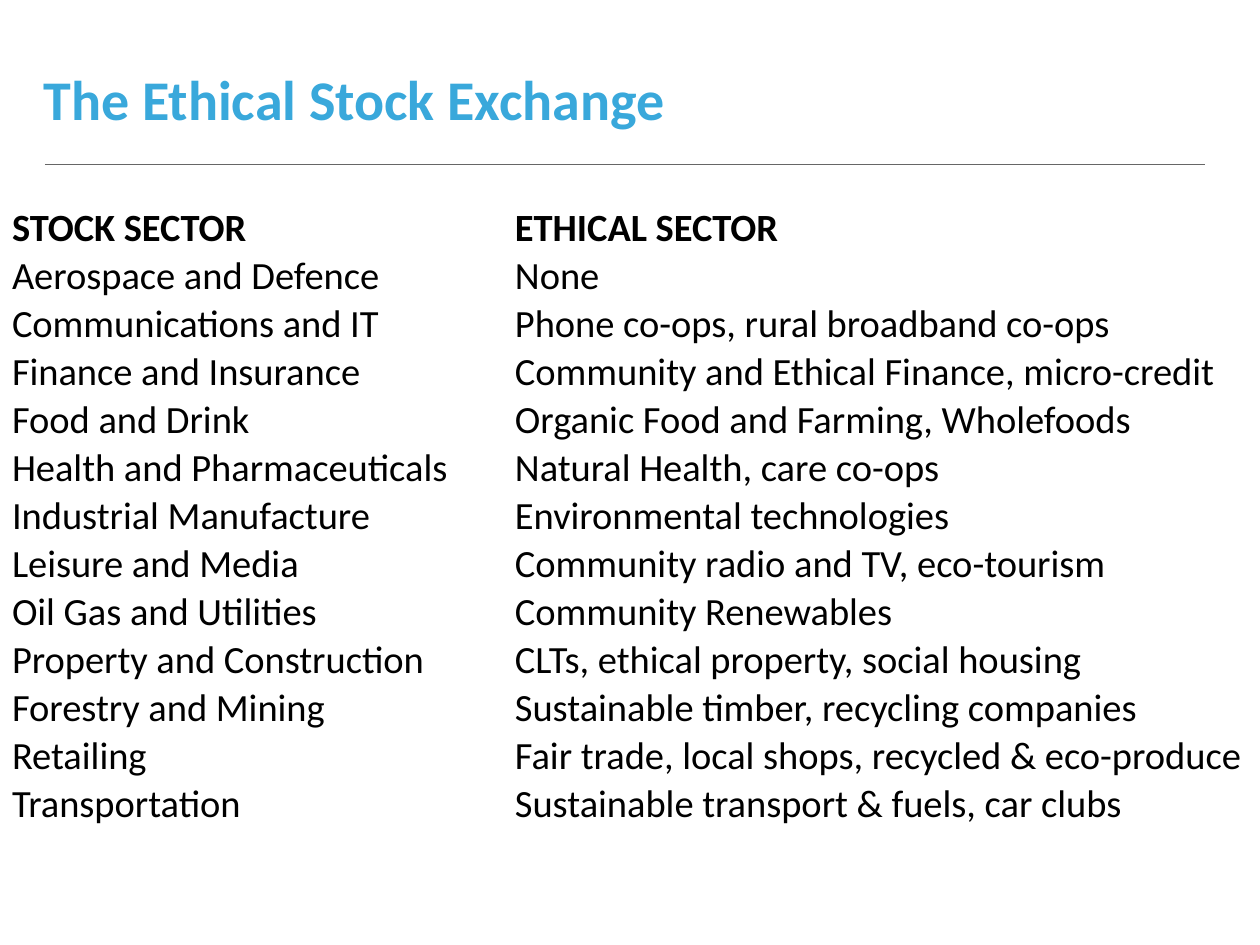
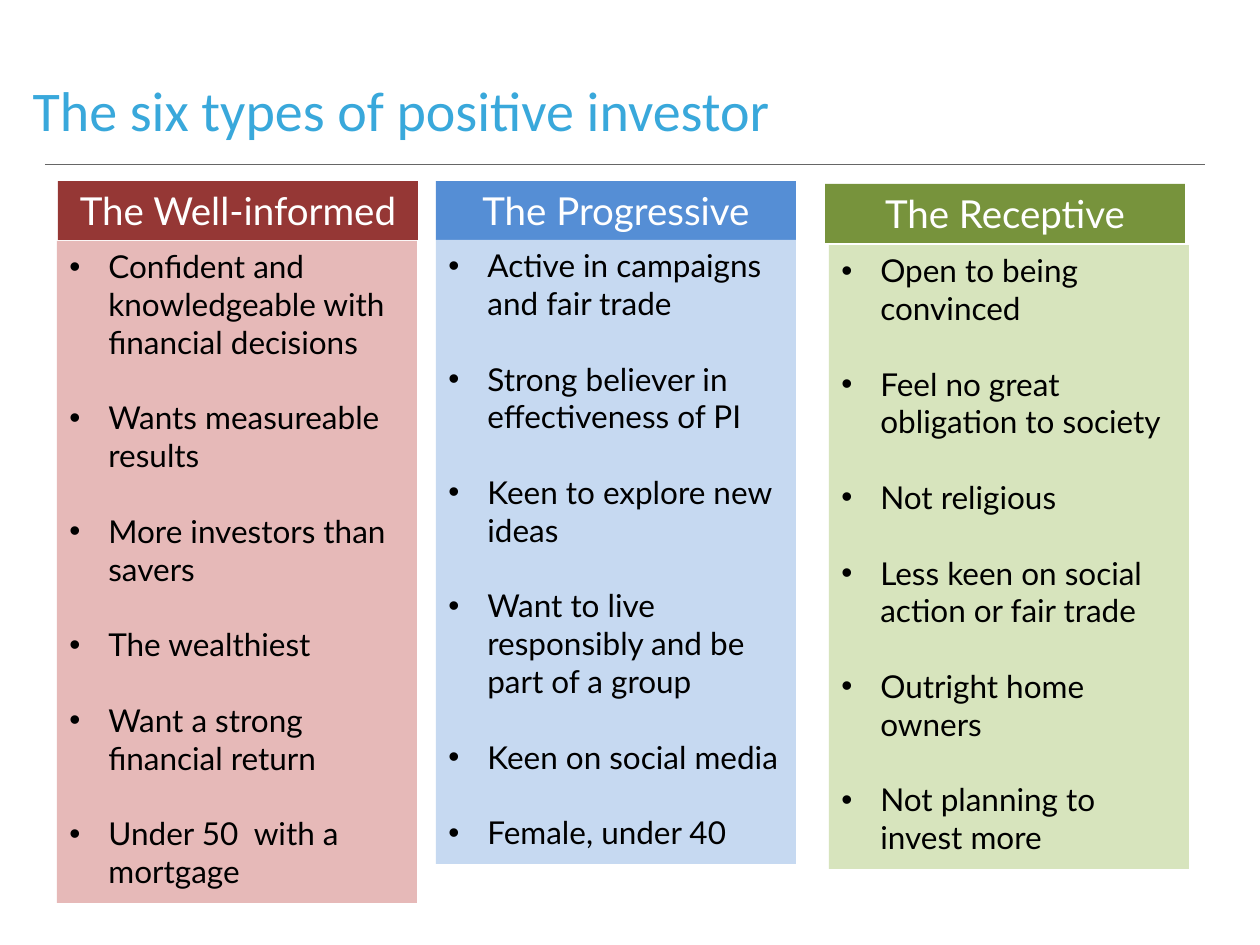
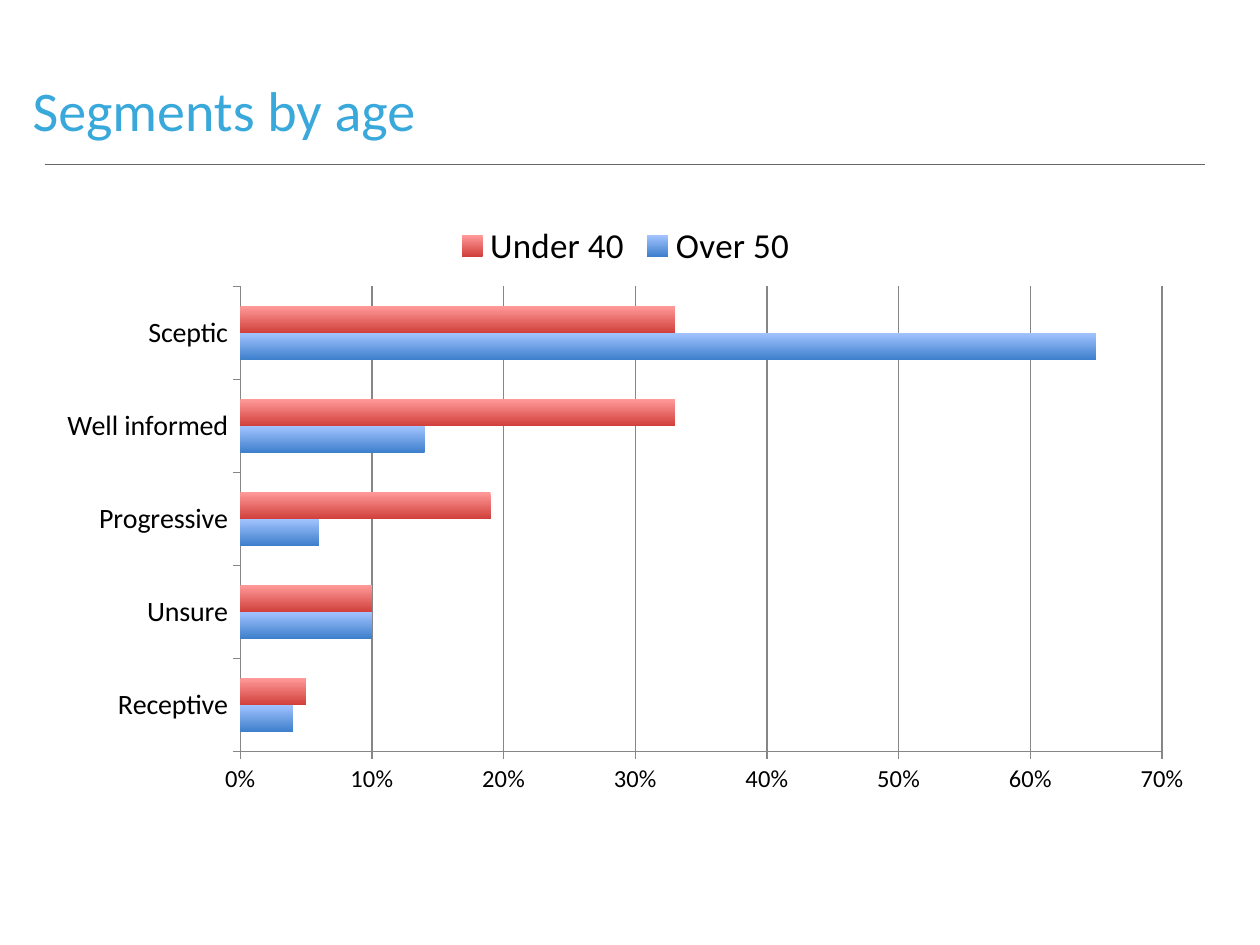
from lxml.etree import SubElement
from pptx import Presentation
from pptx.chart.data import CategoryChartData
from pptx.dml.color import RGBColor
from pptx.enum.chart import XL_CHART_TYPE as ChartType, XL_LEGEND_POSITION as LegendPosition
from pptx.enum.chart import XL_TICK_MARK as TickMark
from pptx.enum.shapes import MSO_CONNECTOR as Connector, MSO_SHAPE as Shape
from pptx.enum.text import MSO_ANCHOR as Anchor, MSO_AUTO_SIZE as AutoSize, PP_ALIGN as Align
from pptx.oxml.ns import qn
from pptx.util import Pt

PX = 7257  # EMU in one px
BULLET_INDENT = 39
SKY, GREY, BLACK, WHITE = "39A8DB", "666666", "000000", "FFFFFF"
GRID = "868686"
color = RGBColor.from_string


def px(*lengths):
    return [length * PX for length in lengths]


def write(frame, text, size, ink=BLACK, font="Calibri", bold=False,
          align=Align.LEFT, anchor=Anchor.TOP, bullets=False, gap=0):
    """Fill a text frame, one paragraph for each line of text."""
    frame.text = text
    frame.word_wrap = True
    frame.vertical_anchor = anchor
    for number, paragraph in enumerate(frame.paragraphs):
        paragraph.alignment = align
        paragraph.space_before = Pt(gap if number else 0)
        paragraph.font.size = Pt(size)
        paragraph.font.name = font
        paragraph.font.bold = bold
        paragraph.font.color.rgb = color(ink)
        if bullets:
            properties = paragraph._p.get_or_add_pPr()
            properties.set("marL", str(BULLET_INDENT * PX))
            properties.set("indent", str(-BULLET_INDENT * PX))
            SubElement(properties, qn("a:buFont")).set("typeface", "Arial")
            SubElement(properties, qn("a:buChar")).set("char", "•")
            # Bullets come before the default run properties
            properties.append(properties.find(qn("a:defRPr")))


deck = Presentation()
deck.slide_width, deck.slide_height = px(1260, 945)
layout = deck.slide_layouts[5]

# Slides with their titles
slides = []
for heading, left, top, bold in [
    ("The Ethical Stock Exchange", 31, 48, True),
    ("The six types of positive investor", 20, 59, False),
    ("Segments by age", 20, 59, False),
]:
    slide = deck.slides.add_slide(layout)
    title = slide.shapes.title
    title.left, title.top, title.width, title.height = px(left, top, 1134, 100)
    write(title.text_frame, heading, 32, SKY, bold=bold, anchor=Anchor.MIDDLE)
    title.text_frame.auto_size = AutoSize.NONE
    slides.append(slide)
exchange, investors, ages = slides

# Rule under the title, shared through the layout
rule = exchange.shapes.add_connector(Connector.STRAIGHT, *px(45, 164, 1205, 164))
rule.line.color.rgb = color(GREY)
rule.line.width = Pt(0.5)
SubElement(rule.element.spPr, qn("a:effectLst"))
layout.shapes.element.append(rule.element)

# Slide 1: sectors side by side
sectors = [
    ("STOCK SECTOR", "ETHICAL SECTOR"),
    ("Aerospace and Defence", "None"),
    ("Communications and IT", "Phone co-ops, rural broadband co-ops"),
    ("Finance and Insurance", "Community and Ethical Finance, micro-credit"),
    ("Food and Drink", "Organic Food and Farming, Wholefoods"),
    ("Health and Pharmaceuticals", "Natural Health, care co-ops"),
    ("Industrial Manufacture", "Environmental technologies"),
    ("Leisure and Media", "Community radio and TV, eco-tourism"),
    ("Oil Gas and Utilities", "Community Renewables"),
    ("Property and Construction", "CLTs, ethical property, social housing"),
    ("Forestry and Mining", "Sustainable timber, recycling companies"),
    ("Retailing", "Fair trade, local shops, recycled & eco-produce"),
    ("Transportation", "Sustainable transport & fuels, car clubs"),
]
sector_table = exchange.shapes.add_table(
    len(sectors), 2, *px(11, 204, 1238, 48 * len(sectors))).table
sector_table.first_row = sector_table.horz_banding = False
sector_table.columns[0].width, sector_table.columns[1].width = px(503, 735)
for row, pair in enumerate(sectors):
    for column, sector in enumerate(pair):
        cell = sector_table.cell(row, column)
        cell.fill.background()
        cell.margin_left = cell.margin_right = cell.margin_top = PX
        cell.margin_bottom = 0
        cell.vertical_anchor = Anchor.BOTTOM
        write(cell.text_frame, sector, 22, bold=row == 0, anchor=Anchor.BOTTOM)

# Slide 2: one header and one list for each investor type
investor_types = [
    ("The Well-informed", "953735", (58, 181), "E6B9B8", (57, 241, 360, 662), [
        "Confident and knowledgeable with financial decisions",
        "Wants measureable results",
        "More investors than savers",
        "The wealthiest",
        "Want a strong financial return",
        "Under 50  with a mortgage",
    ]),
    ("The Progressive", "558ED5", (436, 181), "C6D9F1", (436, 240, 360, 624), [
        "Active in campaigns and fair trade",
        "Strong believer in effectiveness of PI",
        "Keen to explore new ideas",
        "Want to live responsibly and be part of a group",
        "Keen on social media",
        "Female, under 40",
    ]),
    ("The Receptive", "77933C", (825, 184), "D7E4BD", (829, 245, 360, 624), [
        "Open to being convinced",
        "Feel no great obligation to society",
        "Not religious",
        "Less keen on social action or fair trade",
        "Outright home owners",
        "Not planning to invest more",
    ]),
]
for name, dark, corner, light, area, traits in investor_types:
    header = investors.shapes.add_shape(Shape.RECTANGLE, *px(*corner, 360, 59))
    trait_list = investors.shapes.add_shape(Shape.RECTANGLE, *px(*area))
    for panel, fill in [(header, dark), (trait_list, light)]:
        panel.shadow.inherit = False
        panel.line.fill.background()
        panel.fill.solid()
        panel.fill.fore_color.rgb = color(fill)
    write(header.text_frame, name, 22, WHITE, "Lato", align=Align.CENTER)
    write(trait_list.text_frame, "\n".join(traits), 18, font="Lato",
          bullets=True, gap=21.6)

# Slide 3: share of each segment by age
shares = CategoryChartData(number_format="0%")
shares.categories = ["Receptive", "Unsure", "Progressive", "Well informed", "Sceptic"]
shares.add_series("Over 50", [0.04, 0.1, 0.06, 0.14, 0.65])
shares.add_series("Under 40", [0.05, 0.1, 0.19, 0.33, 0.33])
age_chart = ages.shapes.add_chart(
    ChartType.BAR_CLUSTERED, *px(44, 208, 1163, 598), shares).chart
age_chart.has_title = False
age_chart.font.name = "Calibri"
age_chart.font.size = Pt(10)
age_chart.font.color.rgb = color(BLACK)

age_chart.has_legend = True
age_chart.legend.position = LegendPosition.TOP
age_chart.legend.include_in_layout = False
age_chart.legend.font.size = Pt(20)

bars = age_chart.plots[0]
bars.gap_width = 150
bars.overlap = 0
bars.vary_by_categories = False
for age_group, shades in zip(bars.series, [("A3C4FF", "3F80CD"), ("FF9A99", "D1403C")]):
    age_group.invert_if_negative = False
    fill = age_group.format.fill
    fill.gradient()
    fill.gradient_angle = 270
    for stop, shade in zip(fill.gradient_stops, shades):
        stop.color.rgb = color(shade)

segment_axis, share_axis = age_chart.category_axis, age_chart.value_axis
share_axis.minimum_scale, share_axis.maximum_scale = 0, 0.7
share_axis.major_unit = 0.1
share_axis.tick_labels.number_format = "0%"
share_axis.tick_labels.number_format_is_linked = False
share_axis.has_major_gridlines = True
for axis, size in [(segment_axis, 16), (share_axis, 14)]:
    axis.major_tick_mark = TickMark.OUTSIDE
    axis.tick_labels.font.size = Pt(size)
for line in [segment_axis.format.line, share_axis.format.line,
             share_axis.major_gridlines.format.line]:
    line.color.rgb = color(GRID)
    line.width = Pt(0.75)

deck.save("out.pptx")
